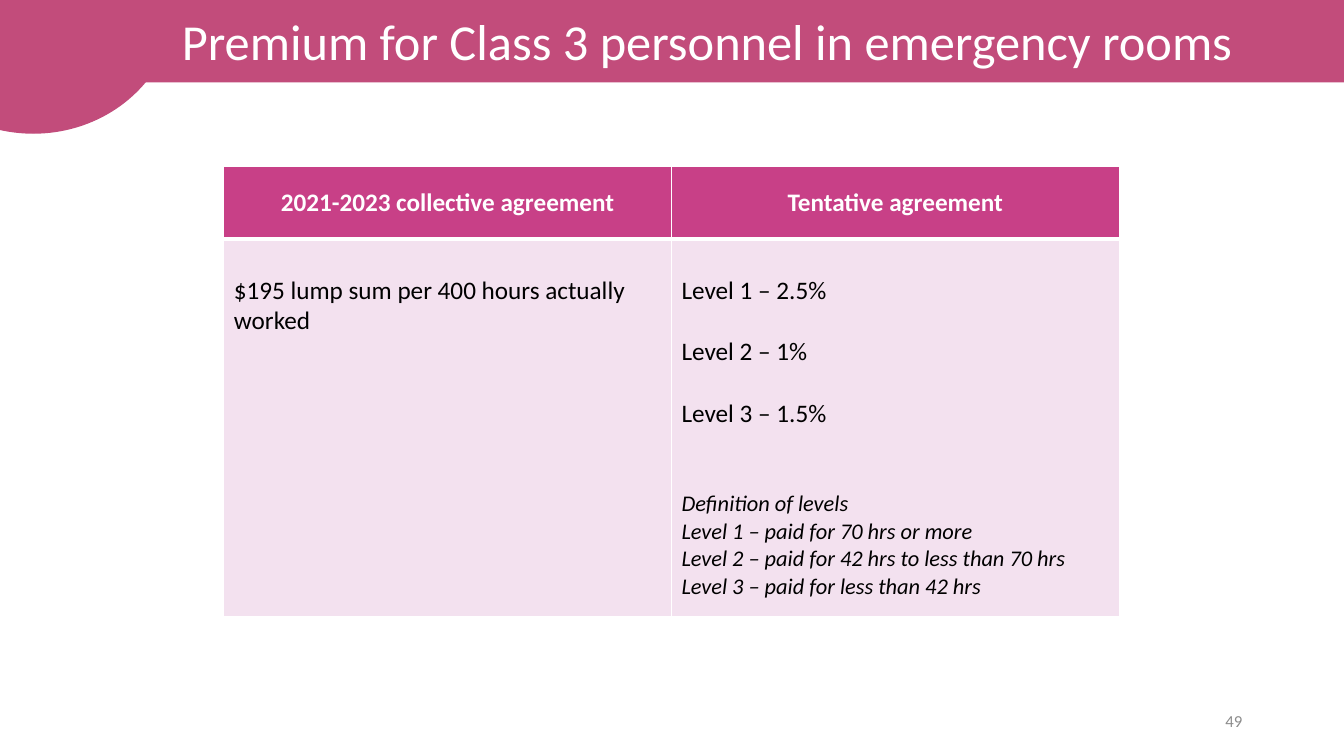
from dataclasses import dataclass

from lxml.etree import SubElement
from pptx import Presentation
from pptx.dml.color import RGBColor as RGB
from pptx.enum.shapes import MSO_SHAPE as Shape
from pptx.enum.text import MSO_ANCHOR as Anchor, PP_ALIGN as Align
from pptx.oxml.ns import qn
from pptx.util import Emu, Pt

PX = 9144  # EMU per px, 100 px to the inch


@dataclass(frozen=True)
class Theme:
    font: str = "Calibri"
    band: str = "C24C7B"
    header: str = "C84087"
    body: str = "F3E1EF"
    white: str = "FFFFFF"
    black: str = "000000"
    grey: str = "8C8C8C"
    title_size: int = 36
    text_size: int = 18
    note_size: int = 16
    number_size: int = 12
    line_gap: int = 22  # one text line, in points


@dataclass(frozen=True)
class Line:
    text: str
    size: int
    color: str
    bold: bool = False
    italic: bool = False
    align: Align = Align.LEFT
    before: int = 0


@dataclass(frozen=True)
class Decor:
    kind: Shape
    box: tuple[int, int, int, int]


T = Theme()


def px(n: int) -> Emu:
    return Emu(n * PX)


def write(tf, lines: list[Line]) -> None:
    tf.word_wrap = True
    tf.text = "\n".join(line.text for line in lines)
    for p, line in zip(tf.paragraphs, lines):
        p.alignment = line.align
        p.space_before = Pt(line.before)
        for r in p.runs:
            r.font.name = T.font
            r.font.size = Pt(line.size)
            r.font.bold = line.bold
            r.font.italic = line.italic
            r.font.color.rgb = RGB.from_string(line.color)


def add_decor(s, decor: Decor):
    sp = s.shapes.add_shape(decor.kind, *map(px, decor.box))
    sp.shadow.inherit = False
    sp.fill.solid()
    sp.fill.fore_color.rgb = RGB.from_string(T.band)
    sp.line.color.rgb = RGB.from_string(T.band)
    sp.line.width = Pt(1)
    return sp


def set_borders(cell, widths: dict[str, int]) -> None:
    tc_pr = cell._tc.get_or_add_tcPr()
    for side, width in widths.items():
        ln = SubElement(tc_pr, qn(f"a:ln{side}"), w=str(Pt(width)))
        fill = SubElement(ln, qn("a:solidFill"))
        SubElement(fill, qn("a:srgbClr"), val=T.white)


def style_cell(cell, fill: str, widths: dict[str, int], lines: list[Line]) -> None:
    set_borders(cell, widths)
    cell.fill.solid()
    cell.fill.fore_color.rgb = RGB.from_string(fill)
    write(cell.text_frame, lines)


def heading(text: str) -> Line:
    return Line(text, T.text_size, T.white, bold=True, align=Align.CENTER)


def body(text: str, gaps: int = 0) -> Line:
    return Line(text, T.text_size, T.black, before=gaps * T.line_gap)


def note(text: str, gaps: int = 0) -> Line:
    return Line(text, T.note_size, T.black, italic=True, before=gaps * T.line_gap)


BAND = Decor(Shape.ROUNDED_RECTANGLE, (0, 0, 1358, 81))
CIRCLE = Decor(Shape.OVAL, (-108, -133, 282, 265))
HEADINGS = [heading("2021-2023 collective agreement"), heading("Tentative agreement")]
TERMS = [
    [body("$195 lump sum per 400 hours actually worked")],
    [
        body("Level 1 – 2.5%"),
        body("Level 2 – 1%", gaps=1),
        body("Level 3 – 1.5%", gaps=1),
        note("Definition of levels", gaps=2),
        note("Level 1 – paid for 70 hrs or more"),
        note("Level 2 – paid for 42 hrs to less than 70 hrs"),
        note("Level 3 – paid for less than 42 hrs"),
    ],
]


def add_agreements(s) -> None:
    tbl = s.shapes.add_table(2, 2, px(222), px(165), px(888), px(447)).table
    tbl.horz_banding = False
    for row, height in zip(tbl.rows, (72, 375)):
        row.height = px(height)
    for col, (title, terms) in enumerate(zip(HEADINGS, TERMS)):
        tbl.columns[col].width = px(444)
        head, cell = tbl.cell(0, col), tbl.cell(1, col)
        style_cell(head, T.header, {"L": 1, "R": 1, "T": 1, "B": 3}, [title])
        head.vertical_anchor = Anchor.MIDDLE
        style_cell(cell, T.body, {"L": 1, "R": 1, "T": 3, "B": 1}, terms)
        cell.margin_top = px(36)


def main() -> None:
    prs = Presentation()
    prs.slide_width, prs.slide_height = px(1333), px(750)
    s = prs.slides.add_slide(prs.slide_layouts[6])

    # Title band and corner circle
    tf = add_decor(s, BAND).text_frame
    tf.vertical_anchor = Anchor.MIDDLE
    write(tf, [Line("Premium for Class 3 personnel in emergency rooms",
                    T.title_size, T.white, align=Align.CENTER)])
    tf.margin_left = px(55)
    add_decor(s, CIRCLE)

    # Slide number
    tf = s.shapes.add_textbox(px(942), px(695), px(300), px(40)).text_frame
    tf.vertical_anchor = Anchor.MIDDLE
    write(tf, [Line("49", T.number_size, T.grey, align=Align.RIGHT)])

    # Comparison table
    add_agreements(s)

    prs.save("out.pptx")


if __name__ == "__main__":
    main()
